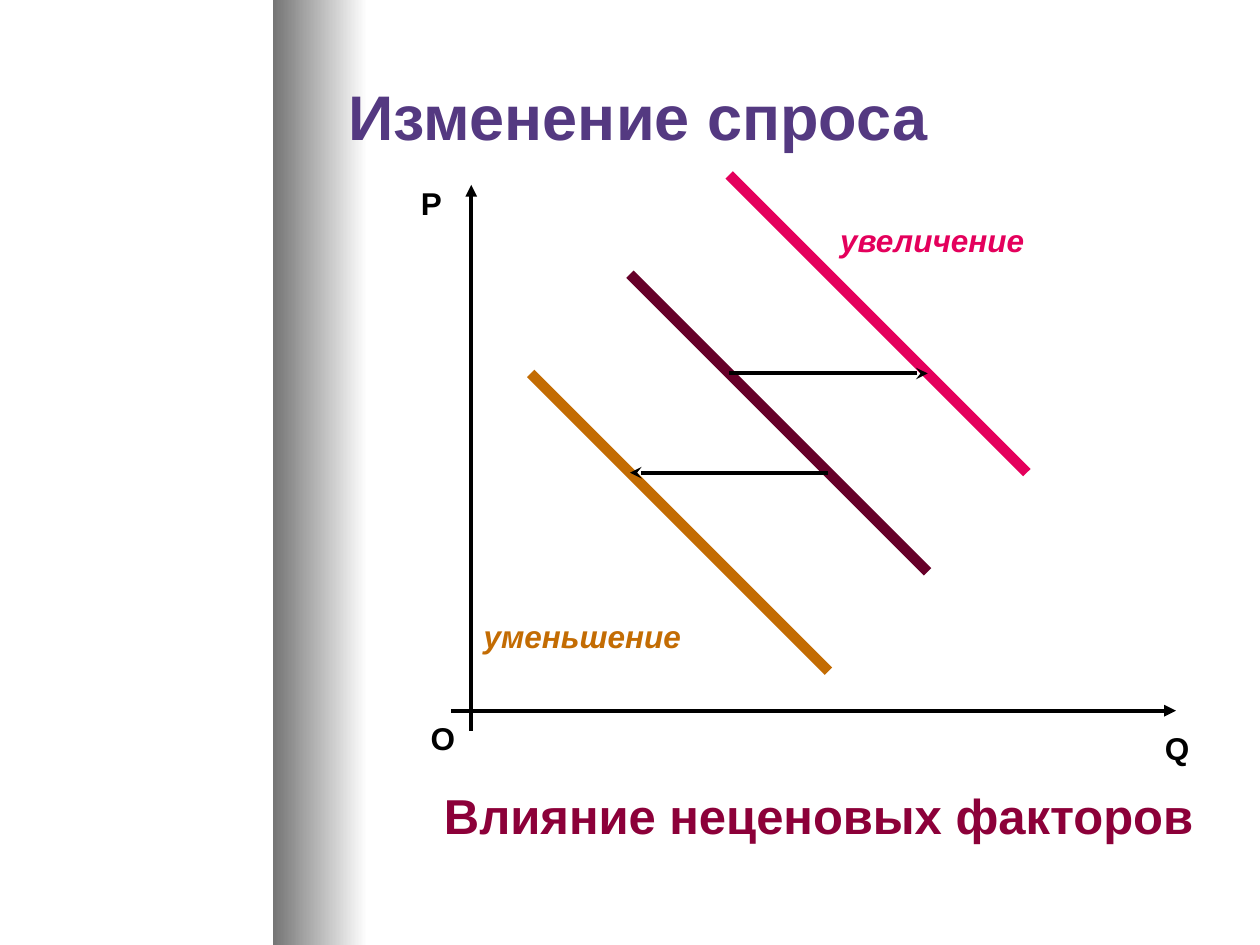
from pptx import Presentation
from pptx.dml.color import RGBColor
from pptx.enum.shapes import MSO_CONNECTOR, MSO_SHAPE
from pptx.enum.text import MSO_ANCHOR, MSO_AUTO_SIZE, PP_ALIGN
from pptx.oxml import parse_xml
from pptx.oxml.ns import nsdecls, qn
from pptx.util import Pt

COLORS = {
    "title": "543981",
    "ink": "000000",
    "base": "660029",
    "less": "C36C03",
    "more": "E4005C",
    "note": "8C0039",
    "shade": "757575",
    "white": "FFFFFF",
}


def color(name):
    return RGBColor.from_string(COLORS[name])


class Canvas:
    """Holds the text style and the slide being drawn; lengths are points."""

    def __init__(self, slide):
        self.slide = slide
        self.style = {"name": "Arial", "size": Pt(18), "bold": True}

    def band(self, x, y, w, h):
        """Draw a rectangle that fades to white from left to right."""
        band = self.slide.shapes.add_shape(
            MSO_SHAPE.RECTANGLE, Pt(x), Pt(y), Pt(w), Pt(h))
        band.shadow.inherit = False
        band.line.fill.background()
        band.fill.gradient()
        band.fill.gradient_angle = 0
        for stop, name in zip(band.fill.gradient_stops, ("shade", "white")):
            stop.color.rgb = color(name)

    def text(self, words, x, y, w, h, tint="ink", wrap=False,
             align=PP_ALIGN.LEFT, anchor=MSO_ANCHOR.TOP, **extra):
        box = self.slide.shapes.add_textbox(Pt(x), Pt(y), Pt(w), Pt(h))
        frame = box.text_frame
        frame.auto_size = MSO_AUTO_SIZE.NONE if wrap else MSO_AUTO_SIZE.SHAPE_TO_FIT_TEXT
        frame.word_wrap = wrap
        frame.vertical_anchor = anchor
        line = frame.paragraphs[0]
        line.alignment = align
        run = line.add_run()
        run.text = words
        for key, value in {**self.style, **extra}.items():
            setattr(run.font, key, value)
        run.font.color.rgb = color(tint)

    def line(self, start, end, tint="ink", width=2.25, head=None):
        link = self.slide.shapes.add_connector(
            MSO_CONNECTOR.STRAIGHT, *map(Pt, (*start, *end)))
        link.line.width = Pt(width)
        link.line.color.rgb = color(tint)
        props = link._element.spPr
        if head:
            props.find(qn("a:ln")).append(
                parse_xml(f'<a:tailEnd {nsdecls("a")} type="{head}"/>'))
        props.append(parse_xml(f'<a:effectLst {nsdecls("a")}/>'))


def main():
    deck = Presentation()
    deck.slide_width, deck.slide_height = Pt(720), Pt(540)
    art = Canvas(deck.slides.add_slide(deck.slide_layouts[6]))

    art.band(156, 0, 54, 540)
    art.text("Изменение спроса", 192, 18, 504, 96, "title", wrap=True,
             anchor=MSO_ANCHOR.MIDDLE, size=Pt(36))

    art.line((269.3, 417.5), (269.3, 105.7), head="triangle")
    art.line((258, 406.1), (672, 406.1), head="triangle")
    for name, x, y, w in (("О", 239, 407.5, 28.8), ("P", 233.4, 101.5, 26.6),
                          ("Q", 658.6, 413, 28.8)):
        art.text(name, x, y, w, 29)

    # Each demand curve is the base curve moved by one step along both axes.
    left, top, step = 360, 156.7, 56.7
    for tint, shift in (("base", 0), ("less", -1), ("more", 1)):
        x, y = left + shift * step, top - shift * step
        art.line((x, y), (x + 3 * step, y + 3 * step), tint, 6)
    for start, end in ((1, 3), (2, 0)):
        y = top + start * step
        art.line((left + start * step, y), (left + end * step, y), head="stealth")

    art.text("Влияние неценовых факторов", 241, 445.5, 453.6, 41, "note",
             wrap=True, align=PP_ALIGN.CENTER, size=Pt(28))
    art.text("увеличение", 473, 122.5, 120, 29, "more", italic=True)
    art.text("уменьшение", 269.3, 349.3, 127.5, 29, "less", italic=True)

    deck.save("out.pptx")


if __name__ == "__main__":
    main()
